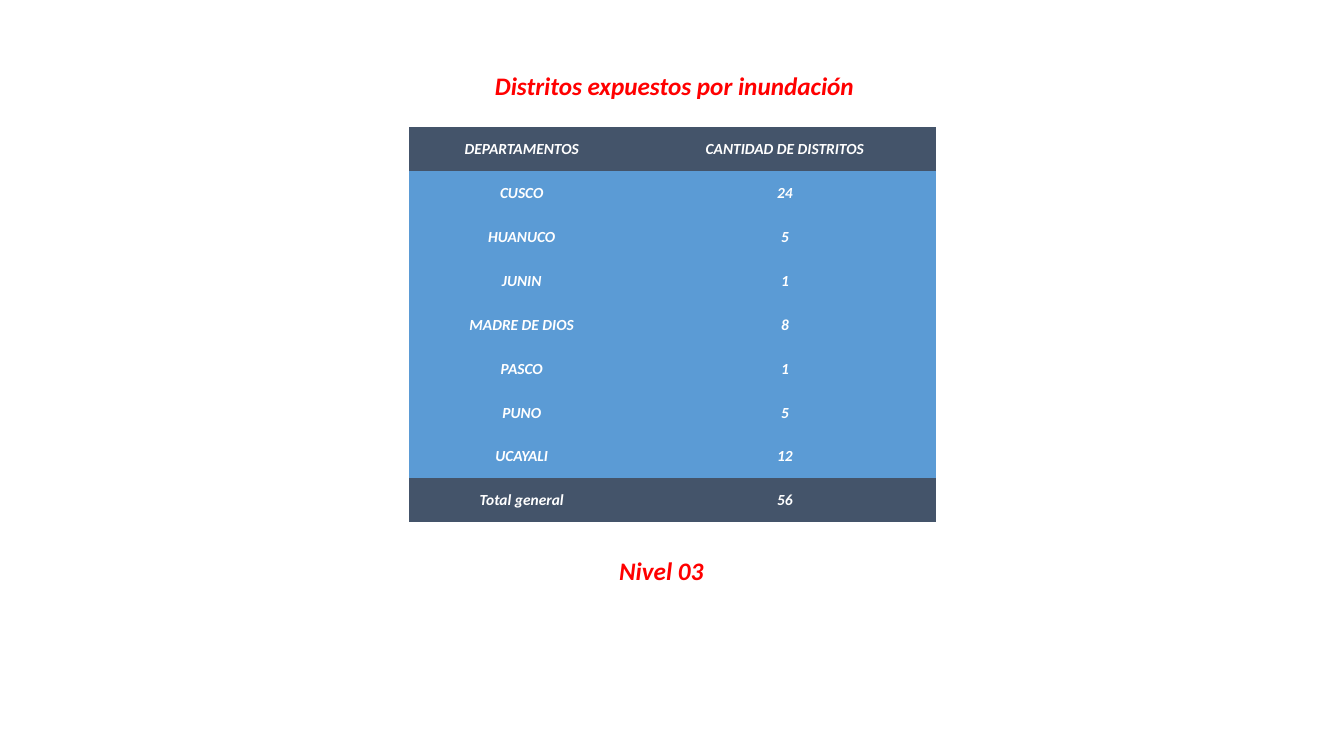
from dataclasses import dataclass

from pptx import Presentation
from pptx.dml.color import RGBColor
from pptx.enum.text import MSO_ANCHOR, MSO_AUTO_SIZE, PP_ALIGN
from pptx.oxml.ns import qn
from pptx.util import Inches, Pt

CENTER = PP_ALIGN.CENTER
MIDDLE = MSO_ANCHOR.MIDDLE
GROW = MSO_AUTO_SIZE.SHAPE_TO_FIT_TEXT
NO_GRID_STYLE = "{2D5ABB26-0587-4C30-8999-92F81FD0307C}"


@dataclass(frozen=True)
class Theme:
    font: str = "Calibri"
    caption: RGBColor = RGBColor(0xFF, 0x00, 0x00)
    cell_text: RGBColor = RGBColor(0xFF, 0xFF, 0xFF)
    dark: RGBColor = RGBColor(0x44, 0x54, 0x6A)
    body: RGBColor = RGBColor(0x5B, 0x9B, 0xD5)
    caption_size: int = 18
    cell_size: int = 11


@dataclass(frozen=True)
class Caption:
    text: str
    left: float
    top: float
    width: float
    height: float
    wrap: bool


THEME = Theme()
CAPTIONS = [
    Caption("Distritos expuestos por inundación", 4.79, 0.65, 3.8, 0.4, False),
    Caption("Nivel 03", 5.96, 5.46, 1.2, 0.4, True),
]
HEADER = ("DEPARTAMENTOS", "CANTIDAD DE DISTRITOS")
DISTRICTS = {
    "CUSCO": 24,
    "HUANUCO": 5,
    "JUNIN": 1,
    "MADRE DE DIOS": 8,
    "PASCO": 1,
    "PUNO": 5,
    "UCAYALI": 12,
}
TABLE_LEFT, TABLE_TOP, TABLE_HEIGHT = 4.06, 1.26, 3.92
COLUMN_WIDTHS = (2.23, 2.99)


def apply(target, values: dict) -> None:
    for name, value in values.items():
        setattr(target, name, value)


def write(tf, text: str, size: int, color: RGBColor) -> None:
    p = tf.paragraphs[0]
    p.alignment = CENTER
    r = p.add_run()
    r.text = text
    apply(r.font, {"name": THEME.font, "size": Pt(size), "bold": True, "italic": True})
    r.font.color.rgb = color


def add_caption(s, caption: Caption) -> None:
    box = (caption.left, caption.top, caption.width, caption.height)
    tf = s.shapes.add_textbox(*map(Inches, box)).text_frame
    apply(tf, {"word_wrap": caption.wrap, "auto_size": GROW})
    write(tf, caption.text, THEME.caption_size, THEME.caption)


def fill_cell(cell, text: str, color: RGBColor) -> None:
    apply(cell, {
        "vertical_anchor": MIDDLE,
        "margin_left": Inches(0.01),
        "margin_right": Inches(0.01),
        "margin_top": Inches(0.01),
        "margin_bottom": 0,
    })
    cell.fill.solid()
    cell.fill.fore_color.rgb = color
    write(cell.text_frame, text, THEME.cell_size, THEME.cell_text)


def add_district_table(s) -> None:
    rows = [HEADER, *DISTRICTS.items(), ("Total general", sum(DISTRICTS.values()))]
    box = (TABLE_LEFT, TABLE_TOP, sum(COLUMN_WIDTHS), TABLE_HEIGHT)
    frame = s.shapes.add_table(len(rows), len(HEADER), *map(Inches, box))
    frame.element.find(".//" + qn("a:tableStyleId")).text = NO_GRID_STYLE
    table = frame.table
    table.horz_banding = False
    for column, width in zip(table.columns, COLUMN_WIDTHS):
        column.width = Inches(width)
    for i, values in enumerate(rows):
        color = THEME.dark if i in (0, len(rows) - 1) else THEME.body
        for cell, value in zip(table.rows[i].cells, values):
            fill_cell(cell, str(value), color)


def main() -> None:
    prs = Presentation()
    apply(prs, {"slide_width": Inches(13.33), "slide_height": Inches(7.5)})
    s = prs.slides.add_slide(prs.slide_layouts[6])
    for caption in CAPTIONS:
        add_caption(s, caption)
    add_district_table(s)
    prs.save("out.pptx")


if __name__ == "__main__":
    main()
